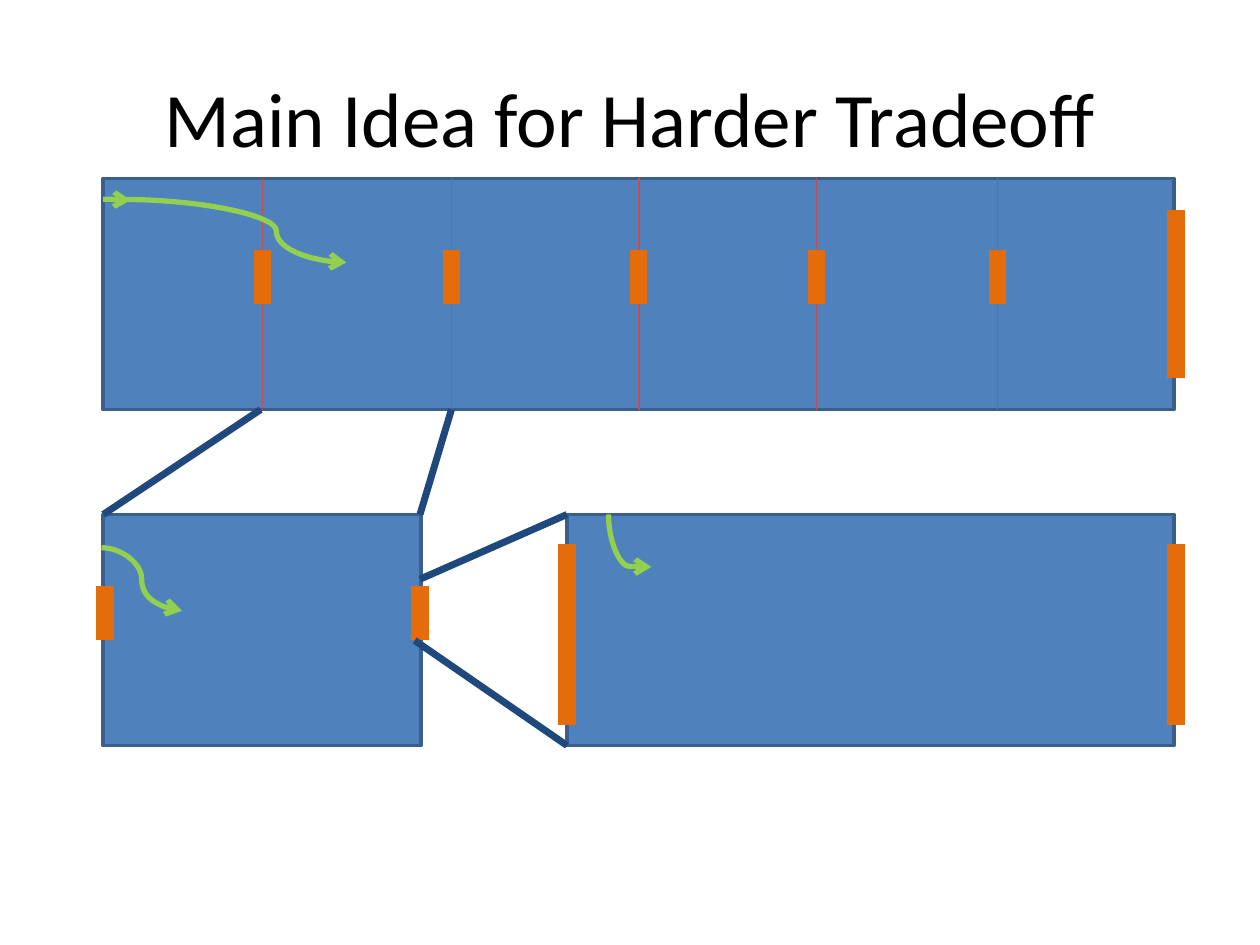
from lxml import etree
from pptx import Presentation
from pptx.dml.color import RGBColor
from pptx.enum.shapes import MSO_CONNECTOR, MSO_SHAPE
from pptx.enum.text import MSO_ANCHOR, PP_ALIGN
from pptx.oxml.ns import qn
from pptx.util import Pt

STRAIGHT, CURVE = MSO_CONNECTOR.STRAIGHT, MSO_CONNECTOR.CURVE
RECTANGLE = MSO_SHAPE.RECTANGLE
MIDDLE, CENTER = MSO_ANCHOR.MIDDLE, PP_ALIGN.CENTER

TITLE = "Main Idea for Harder Tradeoff"
BLUE, EDGE, NAVY = "4F81BD", "3A5F8C", "1F497D"
RED, ORANGE, GREEN = "C0504D", "E46C0A", "92D050"

LEFT, RIGHT = 59, 671
TOP, LOWER, ROOM_HEIGHT = 102, 294, 132
BOTTOM = TOP + ROOM_HEIGHT
CELL_RIGHT, ZOOM_LEFT = 240.5, 324
WALLS = [150, 258, 365, 466.5, 570]
DOOR_HEIGHT = 31

CORRIDOR = (LEFT, TOP, RIGHT)
CELL = (LEFT, LOWER, CELL_RIGHT)
ZOOM = (ZOOM_LEFT, LOWER, RIGHT)

EXIT = [(672, 120, 672, 216)]
CELL_DOORS = [(x, 335, x, 335 + DOOR_HEIGHT) for x in (60, 240)]
ZOOM_DOORS = [(x, 311, x, 414) for x in (ZOOM_LEFT, 672)]
CELL_RAYS = [(149, BOTTOM, LEFT, LOWER), (258, BOTTOM, 240, LOWER)]
ZOOM_RAYS = [(ZOOM_LEFT, LOWER, 240, 331), (237, 366, ZOOM_LEFT, 426)]

ENTRY_PATH = ((59, 113.9, 74.5, 114.4), 0.5, 0)
CORRIDOR_PATH = ((70.5, 114, 198, 150), 0.686, 0)
CELL_PATH = ((58, 313, 104, 349), 0.5, 0)
ZOOM_PATH = ((375, 296.75, 345, 321.25), 0.992, 270)


def color(value):
    return RGBColor.from_string(value)


def add_room(page, room):
    left, top, right = room
    box = page.shapes.add_shape(RECTANGLE, Pt(left), Pt(top), Pt(right - left), Pt(ROOM_HEIGHT))
    box.shadow.inherit = False
    box.fill.solid()
    box.fill.fore_color.rgb = color(BLUE)
    box.line.color.rgb = color(EDGE)
    box.line.width = Pt(2)


def add_line(page, ends, shade, width, kind=STRAIGHT):
    line = page.shapes.add_connector(kind, *[Pt(value) for value in ends])
    line.line.color.rgb = color(shade)
    line.line.width = Pt(width)
    etree.SubElement(line._element.spPr, qn("a:effectLst"))
    return line


def add_lines(page, lines, shade, width):
    for ends in lines:
        add_line(page, ends, shade, width)


def add_path(page, path):
    ends, bend, rotation = path
    line = add_line(page, ends, GREEN, 3, CURVE)
    properties = line._element.spPr
    adjustments = properties.find(qn("a:prstGeom")).find(qn("a:avLst"))
    etree.SubElement(adjustments, qn("a:gd"), name="adj1", fmla=f"val {round(bend * 100000)}")
    if rotation:
        properties.find(qn("a:xfrm")).set("rot", str(rotation * 60000))
    etree.SubElement(line.get_or_add_ln(), qn("a:tailEnd"), type="arrow")


def add_title(page):
    box = page.shapes.add_textbox(Pt(36), Pt(21.6), Pt(648), Pt(90))
    frame = box.text_frame
    frame.word_wrap = True
    frame.vertical_anchor = MIDDLE
    para = frame.paragraphs[0]
    para.text = TITLE
    para.alignment = CENTER
    para.font.name = "Calibri"
    para.font.size = Pt(44)
    para.font.color.rgb = color("000000")


def main():
    deck = Presentation()
    deck.slide_width, deck.slide_height = Pt(720), Pt(540)
    page = deck.slides.add_slide(deck.slide_layouts[6])
    add_title(page)

    add_room(page, CORRIDOR)
    add_lines(page, EXIT, ORANGE, 10)
    add_path(page, ENTRY_PATH)
    add_lines(page, [(x, TOP, x, BOTTOM) for x in WALLS], RED, 1)
    add_lines(page, [(x, 143, x, 143 + DOOR_HEIGHT) for x in WALLS], ORANGE, 10)
    add_path(page, CORRIDOR_PATH)

    add_room(page, CELL)
    add_lines(page, CELL_RAYS, NAVY, 4)
    add_lines(page, CELL_DOORS, ORANGE, 10)
    add_path(page, CELL_PATH)

    add_room(page, ZOOM)
    add_lines(page, ZOOM_RAYS, NAVY, 4)
    add_path(page, ZOOM_PATH)
    add_lines(page, ZOOM_DOORS, ORANGE, 10)

    deck.save("out.pptx")


if __name__ == "__main__":
    main()
